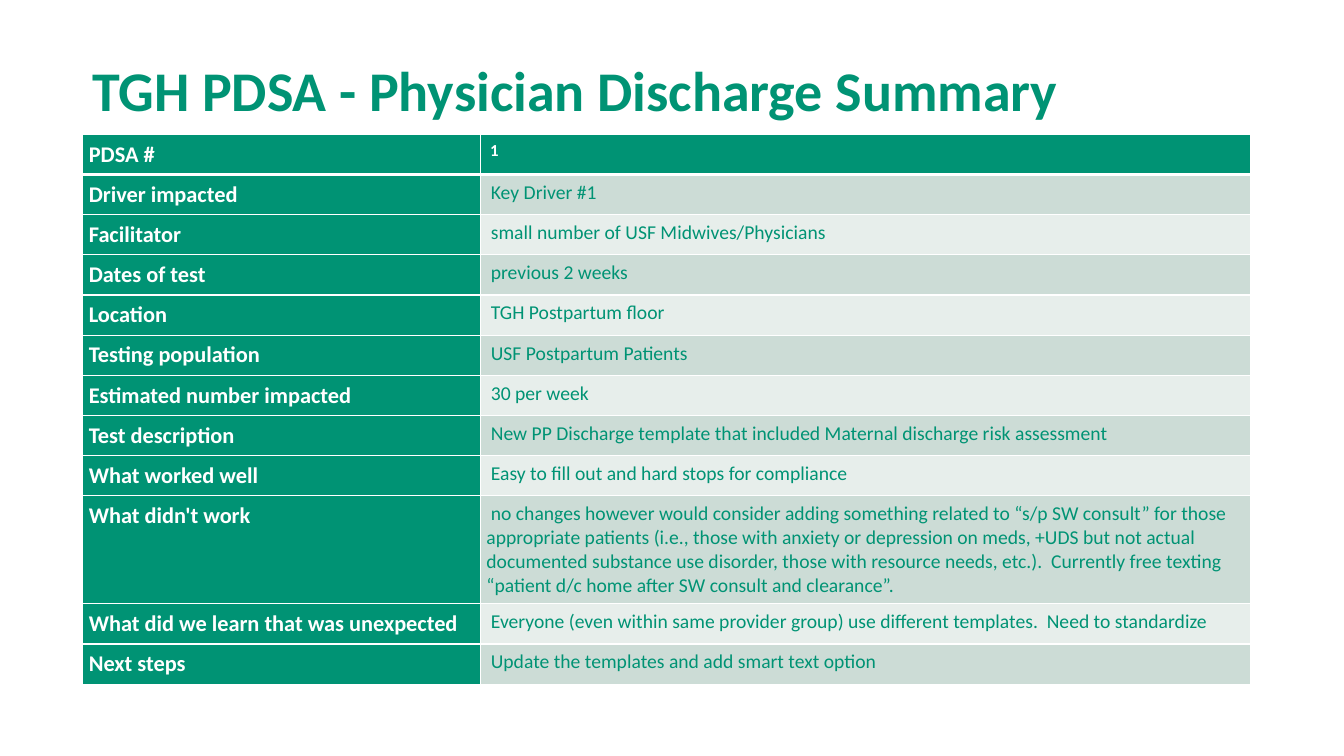
from dataclasses import dataclass

from lxml import etree
from pptx import Presentation
from pptx import util as u
from pptx.dml import color
from pptx.enum import text
from pptx.oxml import ns

Pt = u.Pt


@dataclass(frozen=True)
class Theme:
    font: str = "Calibri"
    green: str = "009374"
    white: str = "FFFFFF"
    bands: tuple = ("E7EEEB", "CCDCD6")
    title_size: int = 40
    label_size: int = 16
    value_size: int = 14
    number_size: int = 12
    thin: int = 1
    thick: int = 3


THEME = Theme()
LEFT, WIDTH = 59, 834.5
LABEL_WIDTH = 284
ROW_HEIGHT, TALL_ROW_HEIGHT = 28.7, 69.8
CELL_INSET = 4.5
HARD_SPACE = chr(160)  # opens every value in the right column

TITLE = "TGH PDSA - Physician Discharge Summary"
PDSA_ROWS = [
    ("PDSA #", "1"),
    ("Driver impacted", "Key Driver #1"),
    ("Facilitator", "small number of USF Midwives/Physicians"),
    ("Dates of test", "previous 2 weeks"),
    ("Location", "TGH Postpartum floor"),
    ("Testing population", "USF Postpartum Patients"),
    ("Estimated number impacted", "30 per week"),
    ("Test description",
     "New PP Discharge template that included Maternal discharge risk assessment"),
    ("What worked well", "Easy to fill out and hard stops for compliance"),
    ("What didn't work",
     "no changes however would consider adding something related to “s/p SW consult” "
     "for those appropriate patients (i.e., those with anxiety or depression on meds, "
     "+UDS but not actual documented substance use disorder, those with resource needs, "
     "etc.).  Currently free texting “patient d/c home after SW consult and clearance”."),
    ("What did we learn that was unexpected",
     "Everyone (even within same provider group) use different templates.  "
     "Need to standardize"),
    ("Next steps", "Update the templates and add smart text option"),
]
TALL_ROW = 9


def add_span(para, words, size, shade, bold):
    span = para.add_run()
    span.text = words
    span.font.name = THEME.font
    span.font.size = Pt(size)
    span.font.bold = bold
    span.font.color.rgb = color.RGBColor.from_string(shade)


def add_title(page, words):
    box = page.shapes.add_textbox(Pt(LEFT), Pt(17.3), Pt(WIDTH), Pt(74.9))
    frame = box.text_frame
    frame.word_wrap = True
    frame.vertical_anchor = text.MSO_ANCHOR.BOTTOM
    para = frame.paragraphs[0]
    para.line_spacing = 0.9
    add_span(para, words, THEME.title_size, THEME.green, True)


def set_borders(cell, top, bottom):
    """Draw white lines round a cell; they must come before its fill."""
    properties = cell._tc.get_or_add_tcPr()
    widths = {"L": THEME.thin, "R": THEME.thin, "T": top, "B": bottom}
    for place, (side, width) in enumerate(widths.items()):
        line = etree.Element(ns.qn(f"a:ln{side}"), w=str(Pt(width)))
        fill = etree.SubElement(line, ns.qn("a:solidFill"))
        etree.SubElement(fill, ns.qn("a:srgbClr"), val=THEME.white)
        properties.insert(place, line)


def fill_cell(cell, words, size, shade, bold, back):
    cell.margin_left = cell.margin_right = Pt(CELL_INSET)
    cell.margin_top = cell.margin_bottom = Pt(CELL_INSET)
    cell.fill.solid()
    cell.fill.fore_color.rgb = color.RGBColor.from_string(back)
    add_span(cell.text_frame.paragraphs[0], words, size, shade, bold)


def add_pdsa_table(page, rows):
    height = ROW_HEIGHT * (len(rows) - 1) + TALL_ROW_HEIGHT
    table = page.shapes.add_table(
        len(rows), 2, Pt(LEFT), Pt(96), Pt(WIDTH), Pt(height)).table
    table.columns[0].width = Pt(LABEL_WIDTH)
    table.columns[1].width = Pt(WIDTH - LABEL_WIDTH)

    for index, (label, value) in enumerate(rows):
        table.rows[index].height = Pt(
            TALL_ROW_HEIGHT if index == TALL_ROW else ROW_HEIGHT)
        label_cell, value_cell = table.cell(index, 0), table.cell(index, 1)
        fill_cell(label_cell, label, THEME.label_size, THEME.white, True, THEME.green)
        if index == 0:
            style = (THEME.number_size, THEME.white, True, THEME.green)
        else:
            style = (THEME.value_size, THEME.green, False, THEME.bands[index % 2])
        fill_cell(value_cell, HARD_SPACE + value, *style)

        # The heavy line lies between the header and the first row
        top = THEME.thick if index == 1 else THEME.thin
        bottom = THEME.thick if index == 0 else THEME.thin
        for cell in (label_cell, value_cell):
            set_borders(cell, top, bottom)


def main():
    deck = Presentation()
    deck.slide_width, deck.slide_height = Pt(960), Pt(540)
    page = deck.slides.add_slide(deck.slide_layouts[6])

    # Table of the test cycle, then the heading
    add_pdsa_table(page, PDSA_ROWS)
    add_title(page, TITLE)

    deck.save("out.pptx")


if __name__ == "__main__":
    main()
